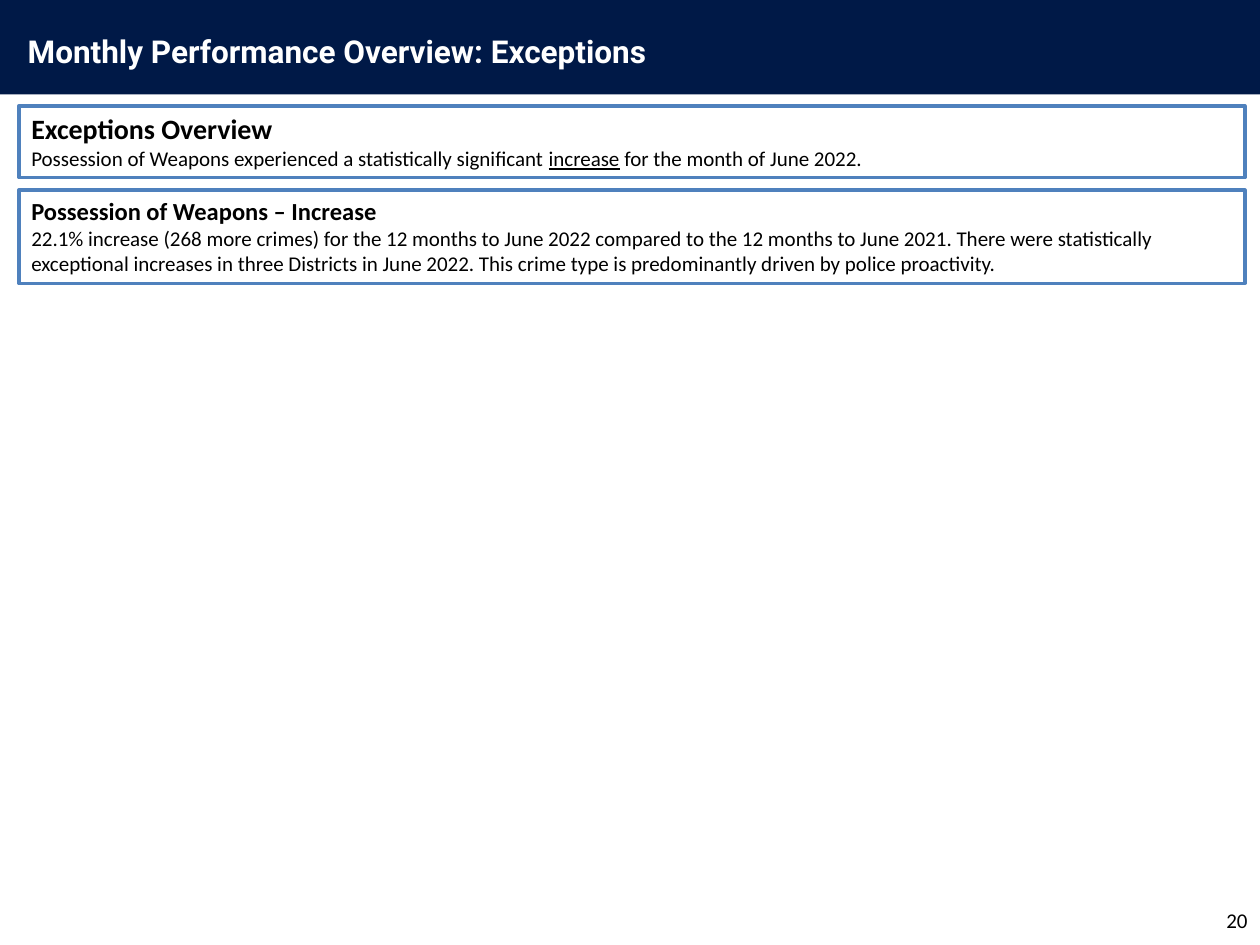
from pptx import Presentation
from pptx.dml.color import RGBColor
from pptx.enum import shapes, text
from pptx.util import Inches, Pt

COLORS = {"navy": "001947", "blue": "4F81BD", "white": "FFFFFF", "black": "000000"}


def rgb(name):
    return RGBColor.from_string(COLORS[name])


def style_run(r, size, color="black", font="Calibri", bold=False, underline=False):
    r.font.size = Pt(size)
    r.font.name = font
    r.font.bold = bold
    r.font.underline = underline
    r.font.color.rgb = rgb(color)


def place(sp, left, top, width, height):
    sp.left, sp.top = Inches(left), Inches(top)
    sp.width, sp.height = Inches(width), Inches(height)


def add_box(s, left, top, width, height, fill, line=None):
    sp = s.shapes.add_shape(shapes.MSO_SHAPE.RECTANGLE, Inches(left), Inches(top),
                            Inches(width), Inches(height))
    sp.shadow.inherit = False
    sp.fill.solid()
    sp.fill.fore_color.rgb = rgb(fill)
    if line:
        sp.line.color.rgb = rgb(line)
        sp.line.width = Pt(2)
    else:
        sp.line.fill.background()
    return sp


def add_header(s, left, top, width, height, title):
    band = add_box(s, left, top, width, height, "navy")
    sp = s.shapes.title
    sp.element.addprevious(band.element)  # the band lies behind the title
    place(sp, left + 0.12, top + 0.2, 5.67, 0.4)
    tf = sp.text_frame
    tf.text = title
    tf.word_wrap = True
    tf.auto_size = text.MSO_AUTO_SIZE.NONE
    tf.vertical_anchor = text.MSO_ANCHOR.TOP
    p = tf.paragraphs[0]
    p.alignment = text.PP_ALIGN.LEFT
    style_run(p.runs[0], 18, "white", "Roboto", bold=True)


def add_panel(s, left, top, width, height, heading, size, body):
    """Add an outlined panel; body is a list of (wording, underlined) pairs."""
    tf = add_box(s, left, top, width, height, "white", "blue").text_frame
    tf.word_wrap = True
    tf.vertical_anchor = text.MSO_ANCHOR.TOP
    tf.text = heading
    style_run(tf.paragraphs[0].runs[0], size, bold=True)
    p = tf.add_paragraph()
    for wording, underlined in body:
        r = p.add_run()
        r.text = wording
        style_run(r, 12, underline=underlined)
    for p in tf.paragraphs:
        p.alignment = text.PP_ALIGN.LEFT


def add_page_number(s, left, top, width, height, number):
    sp = s.shapes.add_textbox(Inches(left), Inches(top), Inches(width), Inches(height))
    tf = sp.text_frame
    tf.word_wrap = True
    tf.vertical_anchor = text.MSO_ANCHOR.MIDDLE
    tf.text = number
    p = tf.paragraphs[0]
    p.alignment = text.PP_ALIGN.RIGHT
    style_run(p.runs[0], 12)


def main():
    prs = Presentation()
    prs.slide_width, prs.slide_height = Inches(10), Inches(7.5)
    s = prs.slides.add_slide(prs.slide_layouts[5])
    add_header(s, 0, 0, 10, 0.75, "Monthly Performance Overview: Exceptions")
    add_page_number(s, 7.67, 7.1, 2.33, 0.4, "20")
    add_panel(s, 0.15, 0.84, 9.73, 0.57, "Exceptions Overview", 16, [
        ("Possession of Weapons experienced a statistically significant ", False),
        ("increase", True),
        (" for the month of June 2022.", False),
    ])
    add_panel(s, 0.15, 1.51, 9.73, 0.74, "Possession of Weapons – Increase", 14, [
        ("22.1% increase (268 more crimes) for the 12 months to June 2022 compared to "
         "the 12 months to June 2021. There were statistically exceptional increases in "
         "three Districts in June 2022. This crime type is predominantly driven by "
         "police proactivity.", False),
    ])
    prs.save("out.pptx")


if __name__ == "__main__":
    main()
